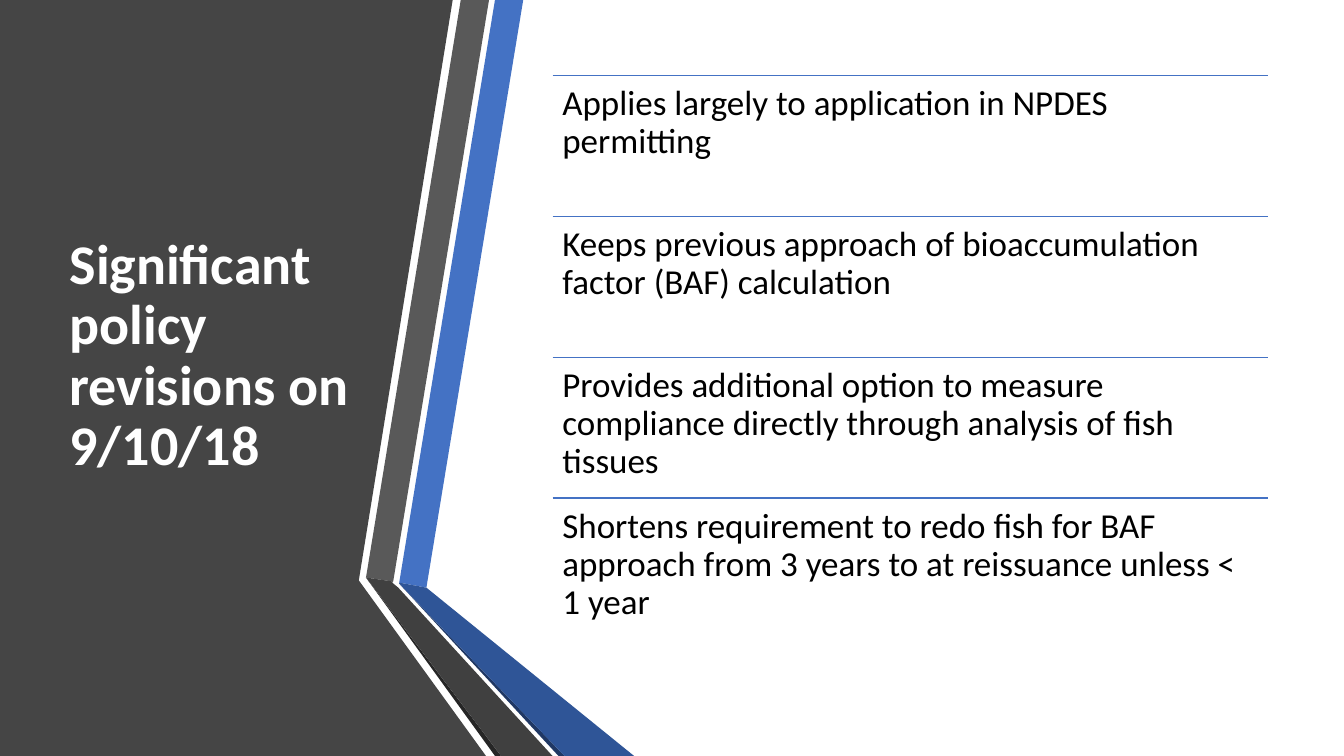
from lxml.etree import SubElement
from pptx import Presentation
from pptx.dml.color import RGBColor
from pptx.enum.shapes import MSO_CONNECTOR
from pptx.enum.text import MSO_ANCHOR, PP_ALIGN
from pptx.oxml.ns import qn
from pptx.util import Pt

EMU_PER_PX = 9144  # 100 px to the inch
FONT = "Calibri"
COLORS = {
    "panel": "454545",
    "blue": "4472C4",
    "blue_fold": "2F5597",
    "blue_edge": "203864",
    "gray": "595959",
    "gray_fold": "404040",
    "gray_edge": "262626",
    "title": "FFFFFF",
    "body": "000000",
}

# Outlines of the dark panel and the folded ribbons, back to front
RIBBONS = [
    ("panel", [(0, 0), (449, 0), (356, 575), (356, 576), (482, 750), (0, 750)]),
    ("blue", [(396, 578), (423, 583), (519, 0), (491, 0)]),
    ("gray", [(485, 0), (457, 0), (363, 573), (390, 577)]),
    ("gray_edge", [(363, 573), (491, 750), (497, 750)]),
    ("blue_edge", [(396, 579), (554, 750), (560, 750)]),
    ("blue_fold", [(396, 579), (560, 750), (629, 750), (423, 583), (396, 578)]),
    ("gray_fold", [(548, 750), (395, 583), (389, 578), (390, 577), (363, 573), (497, 750)]),
]

TITLE = "Significant policy revisions on 9/10/18"
REVISIONS = [
    "Applies largely to application in NPDES permitting",
    "Keeps previous approach of bioaccumulation factor (BAF) calculation",
    "Provides additional option to measure compliance directly through analysis of fish tissues",
    "Shortens requirement to redo fish for BAF approach from 3 years to at reissuance unless < 1 year",
]
LIST_LEFT, LIST_TOP, LIST_WIDTH, LIST_HEIGHT = 548, 75, 710, 559


def px(length):
    return round(length * EMU_PER_PX)


def color(key):
    return RGBColor.from_string(COLORS[key])


def add_ribbon(slide, color_key, corners):
    outline = slide.shapes.build_freeform(*corners[0], scale=EMU_PER_PX)
    outline.add_line_segments(corners[1:], close=True)
    ribbon = outline.convert_to_shape()
    ribbon.shadow.inherit = False
    ribbon.fill.solid()
    ribbon.fill.fore_color.rgb = color(color_key)
    ribbon.line.fill.background()


def format_text(frame, size, color_key, bold=False):
    frame.word_wrap = True
    paragraph = frame.paragraphs[0]
    paragraph.alignment = PP_ALIGN.LEFT
    paragraph.line_spacing = 0.9
    for run in paragraph.runs:
        run.font.name = FONT
        run.font.size = Pt(size)
        run.font.bold = bold
        run.font.color.rgb = color(color_key)


def set_title(slide):
    title = slide.shapes.title
    title.left, title.top, title.width, title.height = map(px, (59, 75, 304, 558))
    title.text_frame.text = TITLE
    title.text_frame.vertical_anchor = MSO_ANCHOR.MIDDLE
    format_text(title.text_frame, 40, "title", bold=True)


def add_divider(slide, top):
    divider = slide.shapes.add_connector(
        MSO_CONNECTOR.STRAIGHT, px(LIST_LEFT), px(top), px(LIST_LEFT + LIST_WIDTH), px(top))
    divider.line.color.rgb = color("blue")
    divider.line.width = Pt(1)
    SubElement(divider._element.spPr, qn("a:effectLst"))


def add_revision(slide, text, top, height):
    revision = slide.shapes.add_textbox(px(LIST_LEFT), px(top), px(LIST_WIDTH), px(height))
    frame = revision.text_frame
    frame.margin_left = frame.margin_right = frame.margin_top = frame.margin_bottom = px(10)
    frame.text = text
    format_text(frame, 25, "body")


def main():
    prs = Presentation()
    prs.slide_width, prs.slide_height = px(1333), px(750)
    slide = prs.slides.add_slide(prs.slide_layouts[5])

    # Dark panel and ribbons
    for color_key, corners in RIBBONS:
        add_ribbon(slide, color_key, corners)

    # Title, brought in front of the panel
    set_title(slide)
    slide.shapes._spTree.append(slide.shapes.title._element)

    # Ruled list of revisions
    row_height = LIST_HEIGHT / len(REVISIONS)
    for row, text in enumerate(REVISIONS):
        top = LIST_TOP + row * row_height
        add_divider(slide, top)
        add_revision(slide, text, top, row_height)

    prs.save("out.pptx")


if __name__ == "__main__":
    main()
